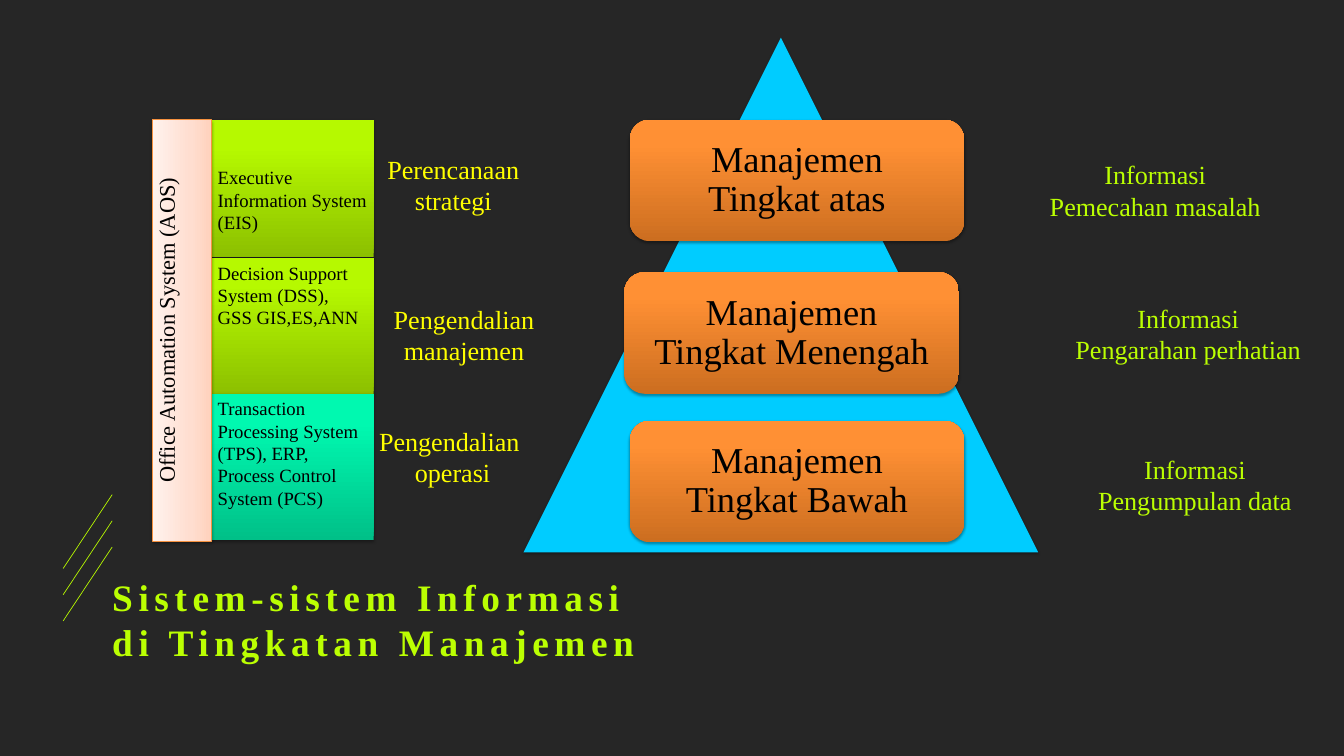
import pptx
import pptx.util
import pptx.oxml
import pptx.oxml.ns
import pptx.dml.color
import pptx.enum.shapes
import pptx.enum.text

PX = 9144
FONT = "Times New Roman"
KIND = pptx.enum.shapes.MSO_SHAPE
ALIGN = pptx.enum.text.PP_ALIGN
ANCHOR = pptx.enum.text.MSO_ANCHOR
INK = {"back": "262626", "lime": "BBFF02", "slash": "B8FB00", "yellow": "FFFF00",
       "black": "000000", "cyan": "00CCFF", "edge": "F69240"}
FADE = {
    "lime": [(0, "8CC000"), (80, "B6F900"), (100, "B7FA00")],
    "mint": [(0, "00C088"), (80, "00F9B0"), (100, "00FAB1")],
    "peach": [(0, "FFD2BD"), (35, "FFDED0"), (100, "FFF2ED")],
    "orange": [(0, "CC6E20"), (80, "FF9034"), (100, "FF9136")],
}
RGB = {name: pptx.dml.color.RGBColor.from_string(code) for name, code in INK.items()}


def paint(kind, box, fade=None):
    shape = slide.shapes.add_shape(kind, *[n * PX for n in box])
    shape.line.fill.background()
    shape.shadow.inherit = False
    props = shape._element.spPr
    if fade:
        stops = "".join(f'<a:gs pos="{pos * 1000}"><a:srgbClr val="{code}"/></a:gs>'
                        for pos, code in FADE[fade])
        grad = pptx.oxml.parse_xml(
            f'<a:gradFill {pptx.oxml.ns.nsdecls("a")} rotWithShape="1"><a:gsLst>{stops}</a:gsLst>'
            '<a:lin ang="16200000" scaled="0"/></a:gradFill>')
        props.find(pptx.oxml.ns.qn("a:prstGeom")).addnext(grad)
    else:
        shape.fill.solid()
        shape.fill.fore_color.rgb = RGB["cyan"]
    props.find(pptx.oxml.ns.qn("a:effectLst")).append(pptx.oxml.parse_xml(
        f'<a:outerShdw {pptx.oxml.ns.nsdecls("a")} blurRad="39370" dist="22860" dir="5400000" '
        'rotWithShape="0"><a:srgbClr val="000000"><a:alpha val="35000"/></a:srgbClr></a:outerShdw>'))
    return shape


def write(shape, lines, size, ink, align, pad, anchor=ANCHOR.TOP):
    frame = shape.text_frame
    frame.word_wrap = True
    frame.vertical_anchor = anchor
    frame.margin_left, frame.margin_top, frame.margin_right, frame.margin_bottom = [n * PX for n in pad]
    frame.text = lines
    for para in frame.paragraphs:
        para.alignment = align
        para.font.size = pptx.util.Pt(size)
        para.font.name = FONT
        para.font.color.rgb = RGB[ink]
    return frame


deck = pptx.Presentation()
deck.slide_width, deck.slide_height = 2000 * PX, 1125 * PX
slide = deck.slides.add_slide(deck.slide_layouts[6])
slide.background.fill.solid()
slide.background.fill.fore_color.rgb = RGB["back"]

for top in (736, 775, 814):
    slash = slide.shapes.add_connector(pptx.enum.shapes.MSO_CONNECTOR.STRAIGHT,
                                       94 * PX, (top + 110) * PX, 167 * PX, top * PX)
    slash.line.color.rgb = RGB["slash"]
    slash.line.width = pptx.util.Pt(0.75)
    slash._element.spPr.append(pptx.oxml.parse_xml(f'<a:effectLst {pptx.oxml.ns.nsdecls("a")}/>'))

title = slide.shapes.add_textbox(*[n * PX for n in (149, 846, 1772, 118)])
frame = write(title, "Sistem-sistem Informasi\vdi Tingkatan Manajemen", 40, "lime",
              ALIGN.LEFT, (18, 9, 18, 9))
frame.paragraphs[0].font.bold = True
for run in frame.paragraphs[0].runs:
    run._r.get_or_add_rPr().set("spc", "600")

systems = [
    (178, 204, "lime", 69, "Executive Information System (EIS)"),
    (384, 203, "lime", 5, "Decision Support System (DSS), GSS GIS,ES,ANN"),
    (586, 218, "mint", 5, "Transaction Processing System (TPS), ERP, Process Control System (PCS)"),
]
for top, high, fade, pad, words in systems:
    block = paint(KIND.RECTANGLE, (314, top, 242, high), fade)
    write(block, words, 20, "black", ALIGN.LEFT, (10, pad, 10, 5))

office = paint(KIND.RECTANGLE, (-43, 448, 627, 87), "peach")
office.rotation = 270
office.line.color.rgb = RGB["edge"]
office.line.width = pptx.util.Pt(0.75)
write(office, "Office Automation System (AOS)", 24, "black", ALIGN.CENTER, (0, 0, 0, 0))

paint(KIND.ISOSCELES_TRIANGLE, (779, 56, 766, 766))
levels = [(937, 178, "atas"), (929, 405, "Menengah"), (937, 626, "Bawah")]
for left, top, word in levels:
    level = paint(KIND.ROUNDED_RECTANGLE, (left, top, 498, 181), "orange")
    frame = write(level, f"Manajemen Tingkat {word}", 39, "black", ALIGN.CENTER,
                  (25, 25, 25, 25), ANCHOR.MIDDLE)
    frame.paragraphs[0].line_spacing = 0.9

labels = [
    (554, 228, 241, 72, "yellow", "Perencanaan\nstrategi"),
    (554, 451, 273, 68, "yellow", "Pengendalian manajemen"),
    (532, 633, 283, 65, "yellow", "Pengendalian \noperasi"),
    (1475, 236, 488, 69, "lime", "Informasi\nPemecahan masalah"),
    (1504, 450, 528, 69, "lime", "Informasi\nPengarahan perhatian"),
    (1504, 674, 548, 69, "lime", "Informasi\nPengumpulan data"),
]
for *box, ink, words in labels:
    label = slide.shapes.add_textbox(*[n * PX for n in box])
    write(label, words, 28, ink, ALIGN.CENTER, (0, 0, 0, 0))

deck.save("out.pptx")
